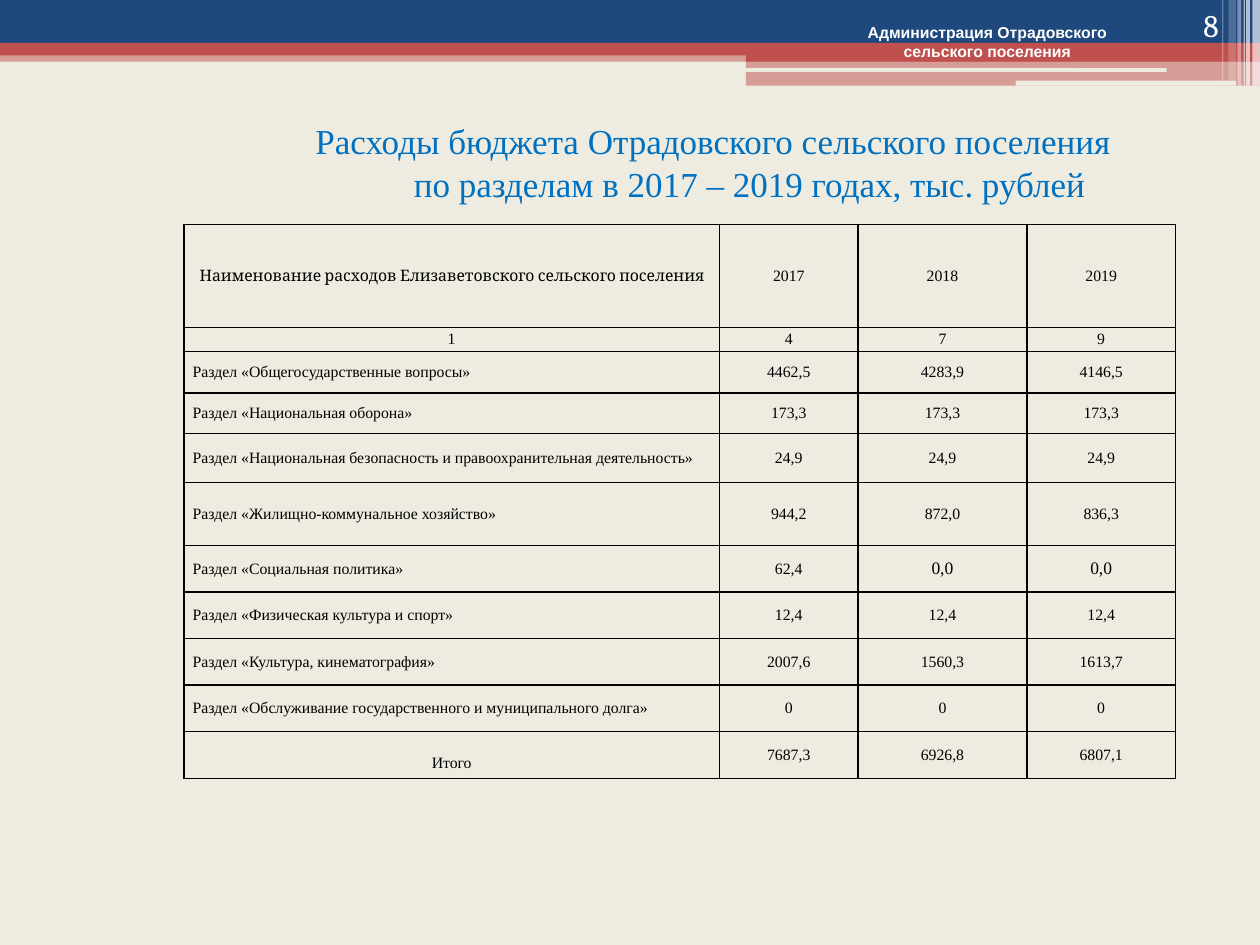
from lxml.etree import SubElement
from pptx import Presentation
from pptx.dml.color import RGBColor
from pptx.enum.shapes import MSO_SHAPE as Preset
from pptx.enum.text import MSO_ANCHOR as Anchor, PP_ALIGN as Align
from pptx.oxml.ns import qn
from pptx.util import Inches, Pt

NAVY, RED, CREAM, WHITE = "1F497D", "C0504D", "EEECE1", "FFFFFF"
BLUE, BLACK = "0070C0", "000000"
SERIF = "Times New Roman"

BANDS = [
    (0, 0.4, 10, 0.09, RED, 50),
    (0, 0, 10, 0.34, NAVY, 100),
    (0, 0.34, 10, 0.1, RED, 100),
    (5.92, 0.39, 4.08, 0.1, RED, 100),
    (5.92, 0.48, 4.08, 0.2, RED, 50),
]
SLOTS = [(5.91, 0.54, 3.35, 0.03, CREAM, 100), (8.06, 0.64, 1.75, 0.04, CREAM, 100)]
STRIPES = [
    (9.94, 0, 0.06, 0.68, WHITE, 65),
    (9.89, 0, 0.03, 0.68, WHITE, 65),
    (9.87, 0, 0.01, 0.68, WHITE, 60),
    (9.82, 0, 0.03, 0.68, WHITE, 40),
    (9.75, 0, 0.06, 0.64, WHITE, 20),
    (9.7, 0, 0.01, 0.64, WHITE, 30),
]
TITLE = [
    ("Расходы бюджета Отрадовского сельского поселения", 1.28),
    ("по разделам в 2017 – 2019 годах, тыс. рублей", 1.86),
]
OWNER = ["Администрация Отрадовского", "сельского поселения"]
PAGE_NUMBER = "8"
COLUMN_WIDTHS = [4.25, 1.1, 1.34, 1.18]
ROWS = [
    (0.82, "Наименование расходов Елизаветовского сельского поселения", "2017", "2018", "2019"),
    (0.19, "1", "4", "7", "9"),
    (0.33, "Раздел «Общегосударственные вопросы»", "4462,5", "4283,9", "4146,5"),
    (0.32, "Раздел «Национальная оборона»", "173,3", "173,3", "173,3"),
    (0.39, "Раздел «Национальная безопасность и правоохранительная деятельность»",
     "24,9", "24,9", "24,9"),
    (0.5, "Раздел «Жилищно-коммунальное хозяйство»", "944,2", "872,0", "836,3"),
    (0.37, "Раздел «Социальная политика»", "62,4", "0,0", "0,0"),
    (0.37, "Раздел «Физическая культура и спорт»", "12,4", "12,4", "12,4"),
    (0.37, "Раздел «Культура, кинематография»", "2007,6", "1560,3", "1613,7"),
    (0.37, "Раздел «Обслуживание государственного и муниципального долга»", "0", "0", "0"),
    (0.37, "Итого", "7687,3", "6926,8", "6807,1"),
]


def paint(fill, color):
    """Fill with a solid hex colour."""
    fill.solid()
    fill.fore_color.rgb = RGBColor.from_string(color)


def style(para, size, font, color, align, bold=False):
    """Set the font and alignment of a paragraph."""
    para.alignment = align
    para.font.size, para.font.name, para.font.bold = Pt(size), font, bold
    para.font.color.rgb = RGBColor.from_string(color)


def add_block(page, preset, left, top, width, height, color, opacity):
    """Add a borderless block with the given opacity in percent."""
    block = page.shapes.add_shape(
        preset, Inches(left), Inches(top), Inches(width), Inches(height))
    block.shadow.inherit = False
    block.line.fill.background()
    paint(block.fill, color)
    if opacity < 100:
        tint = block.fill._xPr.find(qn("a:solidFill"))[0]
        SubElement(tint, qn("a:alpha"), val=str(opacity * 1000))


def add_lines(page, place, lines, **look):
    """Add a text box with one paragraph per line."""
    box = page.shapes.add_textbox(*map(Inches, place))
    frame = box.text_frame
    frame.word_wrap = True
    frame.text = "\n".join(lines)
    for para in frame.paragraphs:
        style(para, color=WHITE, **look)
    return frame


def add_borders(cell):
    """Draw a thin black line on each side of a cell."""
    props = cell._tc.get_or_add_tcPr()
    for index, side in enumerate(("a:lnL", "a:lnR", "a:lnT", "a:lnB")):
        line = props.makeelement(qn(side), {"w": str(Pt(1))})
        props.insert(index, line)
        SubElement(SubElement(line, qn("a:solidFill")), qn("a:srgbClr"), val=BLACK)


def fill_title(page):
    """Place the two title lines in the title placeholder."""
    title = page.shapes.title
    title.left, title.top, title.width, title.height = map(Inches, (0.02, 0.79, 10, 0.99))
    frame = title.text_frame
    frame.vertical_anchor = Anchor.MIDDLE
    frame.text = "\n".join(text for text, _ in TITLE)
    for para, (_, indent) in zip(frame.paragraphs, TITLE):
        style(para, 20, SERIF, BLUE, Align.CENTER)
        para.line_spacing = Pt(24.5)
        para._p.get_or_add_pPr().set("marL", str(Inches(indent)))


def add_budget(page):
    """Add the table of spending by section."""
    height = sum(row[0] for row in ROWS)
    table = page.shapes.add_table(
        len(ROWS), len(COLUMN_WIDTHS), Inches(1.46), Inches(1.78),
        Inches(sum(COLUMN_WIDTHS)), Inches(height)).table
    table.first_row = table.horz_banding = False
    for column, width in zip(table.columns, COLUMN_WIDTHS):
        column.width = Inches(width)
    for r, (row_height, *texts) in enumerate(ROWS):
        table.rows[r].height = Inches(row_height)
        for c, text in enumerate(texts):
            cell = table.cell(r, c)
            cell.text = text
            cell.vertical_anchor = Anchor.MIDDLE
            cell.margin_left = cell.margin_right = Inches(0.07)
            cell.margin_top = cell.margin_bottom = 0
            cell.fill.background()
            add_borders(cell)
            style(cell.text_frame.paragraphs[0],
                  size=10 if text == "0,0" else 9,
                  font="Cambria" if r == c == 0 else SERIF,
                  color=BLACK,
                  align=Align.LEFT if text.startswith("Раздел") else Align.CENTER)
    table.cell(len(ROWS) - 1, 0).margin_top = Inches(0.13)


def main():
    """Build the slide and save it."""
    deck = Presentation()
    deck.slide_width, deck.slide_height = Inches(10), Inches(7.5)
    page = deck.slides.add_slide(deck.slide_layouts[5])
    paint(page.background.fill, CREAM)
    for preset, blocks in ((Preset.RECTANGLE, BANDS), (Preset.ROUNDED_RECTANGLE, SLOTS),
                           (Preset.RECTANGLE, STRIPES)):
        for block in blocks:
            add_block(page, preset, *block)
    fill_title(page)
    add_lines(page, (6.28, 0.13, 3.11, 0.4), OWNER,
              size=9, font="Arial", align=Align.CENTER, bold=True)
    number = add_lines(page, (8.94, 0, 0.83, 0.4), [PAGE_NUMBER],
                       size=18, font="Cambria", align=Align.RIGHT)
    number.vertical_anchor = Anchor.BOTTOM
    add_budget(page)
    deck.save("out.pptx")


if __name__ == "__main__":
    main()
